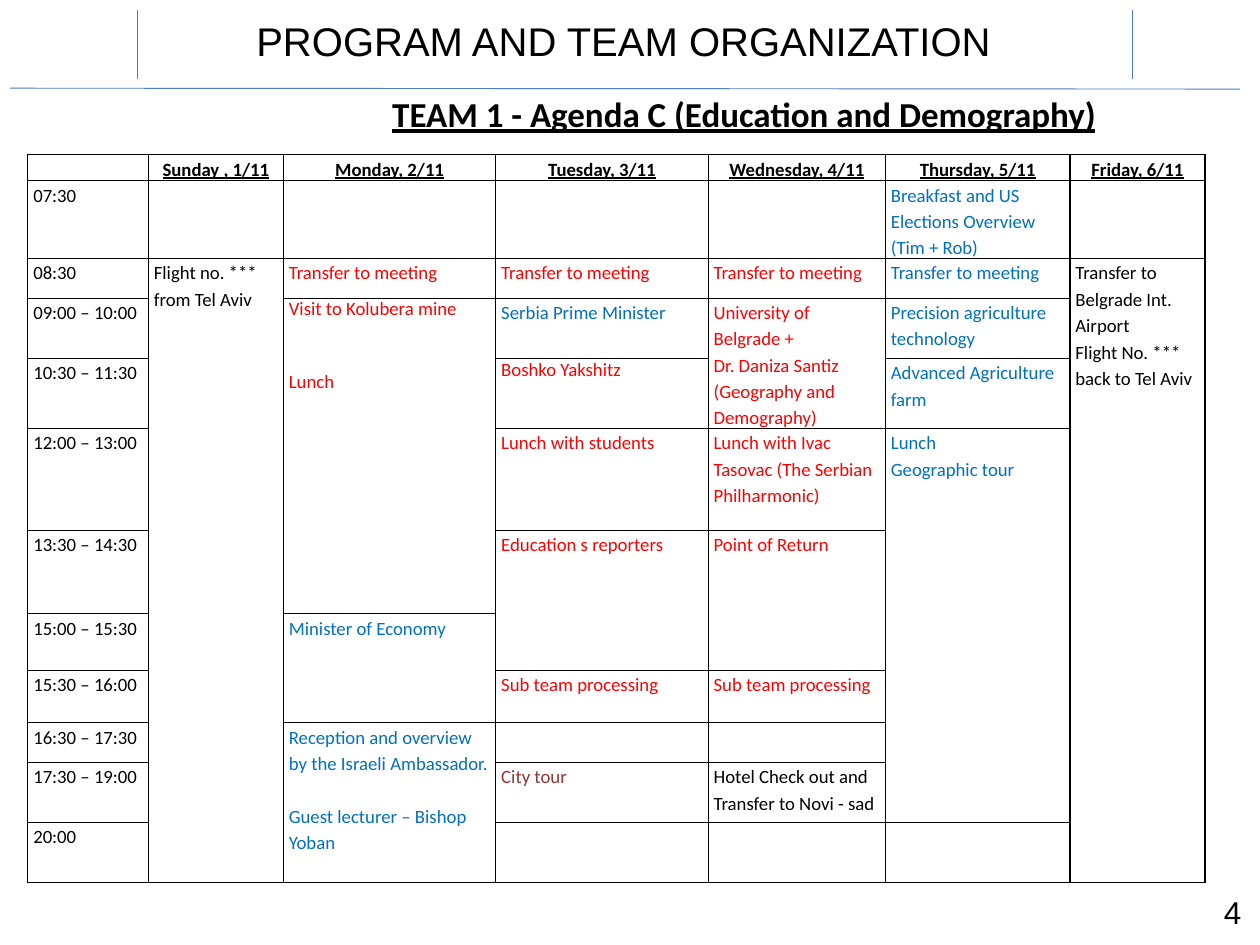
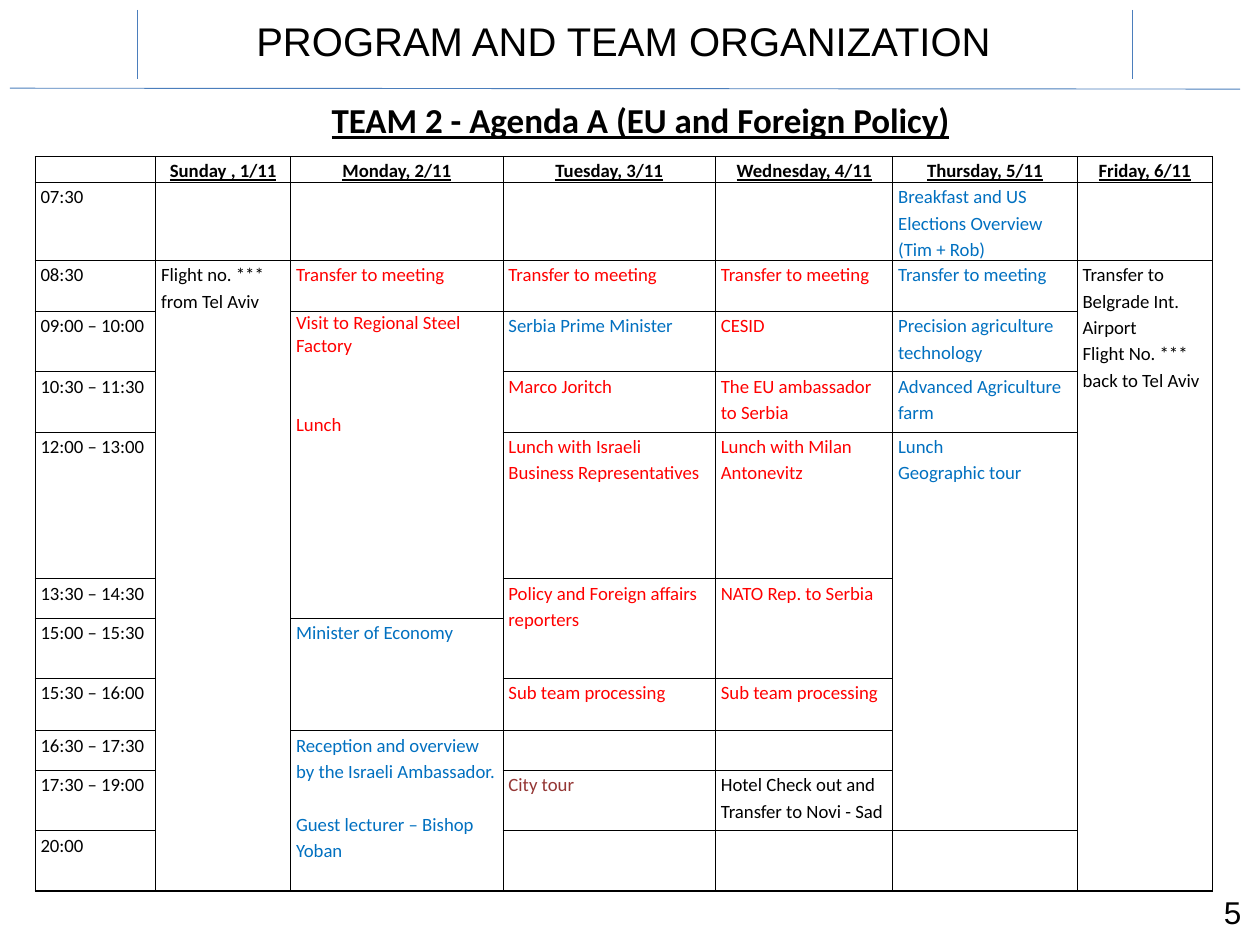
from lxml import etree
from pptx import Presentation
from pptx.dml.color import RGBColor
from pptx.enum.shapes import MSO_CONNECTOR
from pptx.enum.text import PP_ALIGN
from pptx.oxml.ns import qn
from pptx.util import Inches, Pt

BLACK = RGBColor(0x00, 0x00, 0x00)
RED = RGBColor(0xFF, 0x00, 0x00)
BLUE = RGBColor(0x00, 0x70, 0xC0)
WINE = RGBColor(0x94, 0x36, 0x34)
RULE = RGBColor(0x4B, 0x7E, 0xBC)
LEFT, MID, RIGHT = PP_ALIGN.LEFT, PP_ALIGN.CENTER, PP_ALIGN.RIGHT
STRAIGHT = MSO_CONNECTOR.STRAIGHT

TITLE = "PROGRAM AND TEAM ORGANIZATION"
RULES = [(0.11, 0.98, 13.78, 0.99), (12.58, 0.11, 12.58, 0.88), (1.53, 0.11, 1.53, 0.88)]
DAYS = ["Sunday , 1/11", "Monday, 2/11", "Tuesday, 3/11", "Wednesday, 4/11",
        "Thursday, 5/11", "Friday, 6/11"]
TIMES = ["07:30", "08:30", "09:00 – 10:00", "10:30 – 11:30", "12:00 – 13:00",
         "13:30 – 14:30", "15:00 – 15:30", "15:30 – 16:00", "16:30 – 17:30",
         "17:30 – 19:00", "20:00"]
COLS = [1.34, 1.5, 2.36, 2.36, 1.97, 2.05, 1.5]
SUN, MON, TUE, WED, THU, FRI = range(1, 7)

# Events: row, day, rows spanned, colour, text, further format
COMMON = [
    (1, THU, 1, BLUE, "Breakfast and US Elections Overview (Tim + Rob)", {}),
    (2, SUN, 10, BLACK, "Flight no. *** from Tel Aviv", {}),
    *[(2, day, 1, RED, "Transfer to meeting", {}) for day in (MON, TUE, WED)],
    (2, THU, 1, BLUE, "Transfer to meeting", {}),
    (2, FRI, 10, BLACK,
     "Transfer to Belgrade Int. Airport\nFlight No. *** back to Tel Aviv", {}),
    (3, TUE, 1, BLUE, "Serbia Prime Minister", {}),
    (3, THU, 1, BLUE, "Precision agriculture technology", {}),
    (4, THU, 1, BLUE, "Advanced Agriculture farm", {}),
    (5, THU, 6, BLUE, "Lunch\nGeographic tour", {}),
    (7, MON, 2, BLUE, "Minister of Economy", {}),
    *[(8, day, 1, RED, "Sub team processing", {}) for day in (TUE, WED)],
    (9, MON, 3, BLUE, "Reception and overview by the Israeli Ambassador.\n"
     "Guest lecturer – Bishop Yoban", {"gap": 21}),
    (10, TUE, 1, WINE, "City tour", {}),
]
TEAM1 = [
    (3, MON, 4, RED, "Visit to Kolubera mine\nLunch", {"lead": 1, "gap": 40}),
    (3, WED, 2, RED, "University of Belgrade +\n"
     "Dr. Daniza Santiz (Geography and Demography)", {}),
    (4, TUE, 1, RED, "Boshko Yakshitz", {"lead": 1}),
    (5, TUE, 1, RED, "Lunch with students", {}),
    (5, WED, 1, RED, "Lunch with Ivac Tasovac (The Serbian Philharmonic)", {}),
    (6, TUE, 2, RED, "Education s reporters", {}),
    (6, WED, 2, RED, "Point of Return", {}),
    (10, WED, 1, BLACK, "Hotel Check out and Transfer to Novi - sad", {}),
]
TEAM2 = [
    (3, MON, 4, RED, "Visit to Regional Steel Factory\nLunch", {"lead": 1, "gap": 45}),
    (3, WED, 1, RED, "CESID", {}),
    (4, TUE, 1, RED, "Marco Joritch", {}),
    (4, WED, 1, RED, "The EU ambassador to Serbia", {}),
    (5, TUE, 1, RED, "Lunch with Israeli Business Representatives", {}),
    (5, WED, 1, RED, "Lunch with Milan Antonevitz", {}),
    (6, TUE, 2, RED, "Policy and Foreign affairs reporters", {}),
    (6, WED, 2, RED, "NATO Rep. to Serbia", {}),
    (10, WED, 1, BLACK, "Hotel Check out and Transfer to Novi - Sad", {}),
]
ROWS1 = [0.29, 0.86, 0.44, 0.67, 0.78, 1.13, 0.93, 0.63, 0.58, 0.44, 0.67, 0.67]
ROWS2 = [0.29, 0.86, 0.57, 0.67, 0.67, 1.63, 0.44, 0.67, 0.58, 0.44, 0.67, 0.67]


def write(frame, text, size=15, face="Calibri", color=BLACK, bold=False,
          line=False, align=LEFT, lead=1.15, gap=0):
    """Fill a frame, one paragraph a line; gap is the space between them."""
    frame.word_wrap = True
    for i, words in enumerate(text.split("\n")):
        para = frame.add_paragraph() if i else frame.paragraphs[0]
        para.alignment, para.line_spacing = align, lead
        if i and gap:
            para.space_before = Pt(gap)
        run = para.add_run()
        run.text = words
        font = run.font
        font.size, font.name, font.bold, font.underline = Pt(size), face, bold, line
        font.color.rgb = color


class Deck:
    def __init__(self):
        self.prs = Presentation()
        self.prs.slide_width, self.prs.slide_height = Inches(14), Inches(10.5)
        self.slide = None

    def page(self, number):
        """Start a slide with the shared rules, title and number."""
        self.slide = self.prs.slides.add_slide(self.prs.slide_layouts[6])
        for ends in RULES:
            self.rule(*ends)
        self.label((12.72, 9.87, 1.17, 0.56), str(number), size=25.2,
                   face="Arial", align=RIGHT, lead=1)
        self.label((2.75, 0.13, 8.74, 0.64), TITLE, size=32, face="Arial", lead=1)

    def rule(self, *ends):
        line = self.slide.shapes.add_connector(STRAIGHT, *map(Inches, ends))
        line.line.color.rgb, line.line.width = RULE, Pt(0.75)
        etree.SubElement(line._element.spPr, qn("a:effectLst"))

    def label(self, spot, text, **style):
        box = self.slide.shapes.add_textbox(*map(Inches, spot))
        write(box.text_frame, text, **style)

    def head(self, spot, text, **style):
        self.label(spot, text, size=28, bold=True, line=True, **style)

    def border(self, cell):
        props = cell._tc.get_or_add_tcPr()
        for i, side in enumerate(("a:lnL", "a:lnR", "a:lnT", "a:lnB")):
            edge = etree.Element(qn(side), w=str(Pt(1)))
            fill = etree.SubElement(edge, qn("a:solidFill"))
            etree.SubElement(fill, qn("a:srgbClr"), val=str(BLACK))
            props.insert(i, edge)

    def agenda(self, left, top, rows, events):
        frame = self.slide.shapes.add_table(
            len(rows), len(COLS), Inches(left), Inches(top),
            Inches(sum(COLS)), Inches(sum(rows)))
        table = frame.table
        table.first_row = table.horz_banding = False
        for column, width in zip(table.columns, COLS):
            column.width = Inches(width)
        for row, height in zip(table.rows, rows):
            row.height = Inches(height)
        for cell in table.iter_cells():
            cell.fill.background()
            cell.margin_left = cell.margin_right = Inches(0.06)
            cell.margin_top = cell.margin_bottom = 0
            self.border(cell)

        # Day and time headings
        for col, day in enumerate(DAYS, 1):
            write(table.cell(0, col).text_frame, day, bold=True, line=True, align=MID)
        for row, time in enumerate(TIMES, 1):
            write(table.cell(row, 0).text_frame, time)

        # Events
        for row, col, span, color, text, style in events:
            cell = table.cell(row, col)
            if span > 1:
                cell.merge(table.cell(row + span - 1, col))
            write(cell.text_frame, text, color=color, **style)

        # Empty cells keep the text size so that rows do not grow
        for cell in table.iter_cells():
            if not cell.text_frame.text:
                para = cell.text_frame.paragraphs[0]
                etree.SubElement(para._p, qn("a:endParaRPr"), sz="1500")


def main():
    deck = Deck()

    # Team 1
    deck.page(4)
    deck.head((4.26, 0.98, 8.43, 0.57),
              "TEAM 1 - Agenda C (Education and Demography)", lead=1)
    deck.agenda(0.31, 1.72, ROWS1, COMMON + TEAM1)

    # Team 2
    deck.page(5)
    deck.head((3.54, 0.98, 7.15, 0.61),
              "TEAM 2 - Agenda A (EU and Foreign Policy)", align=MID)
    deck.agenda(0.39, 1.74, ROWS2, COMMON + TEAM2)

    deck.prs.save("out.pptx")


if __name__ == "__main__":
    main()
